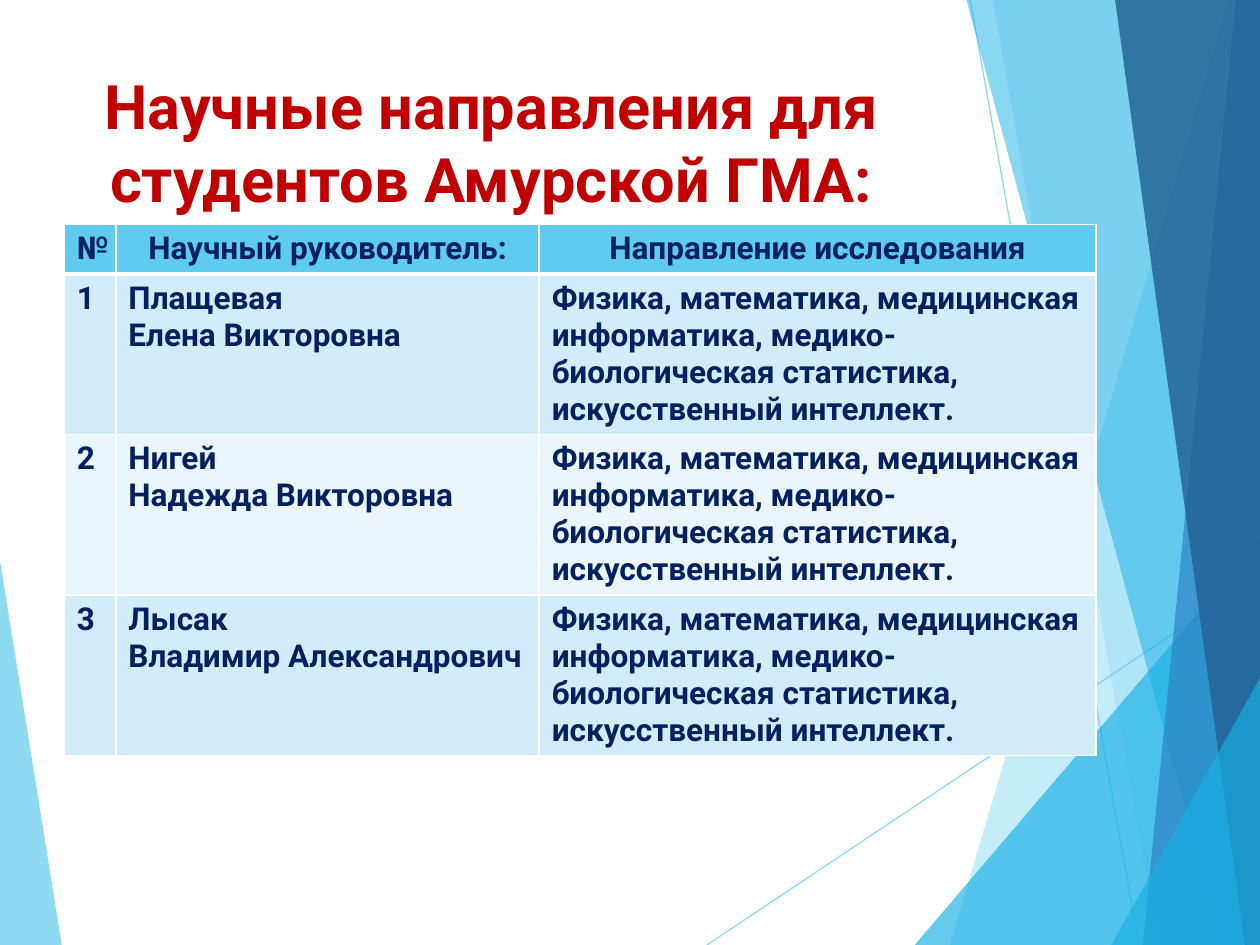
"""Build a slide listing research directions and their supervisors."""
from lxml import etree
from pptx import Presentation
from pptx.dml.color import RGBColor
from pptx.enum.shapes import MSO_CONNECTOR
from pptx.enum.text import MSO_ANCHOR, MSO_AUTO_SIZE, PP_ALIGN
from pptx.oxml import parse_xml
from pptx.oxml.ns import nsdecls, qn
from pptx.util import Inches, Pt

STRAIGHT = MSO_CONNECTOR.STRAIGHT
TOP = MSO_ANCHOR.TOP
NO_AUTOFIT = MSO_AUTO_SIZE.NONE
CENTER, LEFT = PP_ALIGN.CENTER, PP_ALIGN.LEFT

SKY, AZURE, WHITE = "5FCBEF", "17B0E4", "FFFFFF"
BAND_FILLS = ("D2ECF9", "EAF6FC")
TITLE_FORMAT = {"name": "Roboto", "size": Pt(35), "bold": True, "color": "C00000"}
TABLE_FORMAT = {"name": "Roboto", "size": Pt(18), "bold": True, "color": "002060"}

LEFT_FACET = ([(0, 4.45), (0.49, 7.5), (0, 7.5)], SKY, 70)
RAYS = [((5.61, 7.5), (10, 4.57)), ((7.7, 0), (9.04, 7.5))]
RIGHT_FACETS = [
    ([(9.75, 0), (7.54, 7.5), (10, 7.5), (10, 0)], SKY, 36),
    ([(7.88, 0), (9.19, 7.5), (10, 7.5), (10, 0)], SKY, 20),
    ([(7.26, 7.5), (10, 4.29), (10, 7.5)], AZURE, 66),
    ([(7.67, 0), (9.7, 7.5), (10, 7.5), (10, 0)], AZURE, 50),
    ([(9.81, 0), (9.07, 7.5), (10, 7.5), (10, 0)], "2E83C3", 70),
    ([(8.85, 0), (9.88, 7.5), (10, 7.5), (10, 0)], "226292", 82),
    ([(8.82, 7.5), (10, 5.38), (10, 7.5)], AZURE, 66),
]

TITLE = "Научные направления для студентов Амурской ГМА:"
HEADINGS = ("№", "Научный руководитель:", "Направление исследования")
SUPERVISORS = (
    "Плащевая\nЕлена Викторовна",
    "Нигей\nНадежда Викторовна",
    "Лысак\nВладимир Александрович",
)
DIRECTION = (
    "Физика, математика, медицинская информатика, "
    "медико-биологическая статистика, искусственный интеллект."
)
COLUMN_WIDTHS = (0.41, 3.36, 4.42)
ROW_HEIGHTS = (0.39, 1.27, 1.27, 1.27)


def rgb(value):
    """Return the colour for a hex string."""
    return RGBColor.from_string(value)


def set_alpha(fill_parent, percent):
    """Set the opacity of the first solid colour under an element."""
    color = next(fill_parent.iter(qn("a:srgbClr")))
    etree.SubElement(color, qn("a:alpha")).set("val", str(percent * 1000))


def format_paragraph(paragraph, values, alignment):
    """Apply font values and alignment to a paragraph's runs."""
    paragraph.alignment = alignment
    for run in paragraph.runs:
        for name, value in values.items():
            if name == "color":
                run.font.color.rgb = rgb(value)
            else:
                setattr(run.font, name, value)


def add_facet(slide, points, color, opacity):
    """Draw a translucent polygon."""
    vertices = [(Inches(x), Inches(y)) for x, y in points]
    builder = slide.shapes.build_freeform(*vertices[0])
    builder.add_line_segments(vertices[1:], close=True)
    shape = builder.convert_to_shape()
    shape.shadow.inherit = False
    shape.fill.solid()
    shape.fill.fore_color.rgb = rgb(color)
    shape.line.fill.background()
    set_alpha(shape.element.spPr, opacity)


def add_ray(slide, start, end):
    """Draw a thin translucent line."""
    ends = [Inches(value) for value in (*start, *end)]
    connector = slide.shapes.add_connector(STRAIGHT, *ends)
    connector.line.color.rgb = rgb(SKY)
    connector.line.width = Pt(0.75)
    properties = connector.element.spPr
    set_alpha(properties, 70)
    etree.SubElement(properties, qn("a:effectLst"))


def add_title(slide):
    """Fill and place the title in front of the facets."""
    title = slide.shapes.title
    title.element.getparent().append(title.element)
    title.left, title.top = Inches(0.43), Inches(0.44)
    title.width, title.height = Inches(6.94), Inches(1.44)
    frame = title.text_frame
    frame.text = TITLE
    frame.word_wrap = True
    frame.auto_size = NO_AUTOFIT
    frame.vertical_anchor = TOP
    frame.margin_top = Inches(0.1)
    format_paragraph(frame.paragraphs[0], TITLE_FORMAT, CENTER)


def add_borders(cell, top, bottom):
    """Give a cell white borders with the stated top and bottom widths."""
    properties = cell._tc.get_or_add_tcPr()
    for side, width in {"L": 1, "R": 1, "T": top, "B": bottom}.items():
        properties.append(parse_xml(
            f'<a:ln{side} {nsdecls("a")} w="{Pt(width)}"><a:solidFill>'
            f'<a:srgbClr val="{WHITE}"/></a:solidFill></a:ln{side}>'
        ))


def format_cell(cell, text, row):
    """Write and style one table cell."""
    cell.text = text
    add_borders(cell, 3 if row == 1 else 1, 3 if row == 0 else 1)
    cell.fill.solid()
    cell.fill.fore_color.rgb = rgb(BAND_FILLS[(row - 1) % 2] if row else SKY)
    for paragraph in cell.text_frame.paragraphs:
        format_paragraph(paragraph, TABLE_FORMAT, LEFT if row else CENTER)


def add_directions_table(slide):
    """Add the table of supervisors and directions."""
    rows = [HEADINGS]
    for number, supervisor in enumerate(SUPERVISORS, 1):
        rows.append((str(number), supervisor, DIRECTION))
    table = slide.shapes.add_table(
        len(rows), len(HEADINGS), Inches(0.51), Inches(1.78),
        Inches(sum(COLUMN_WIDTHS)), Inches(sum(ROW_HEIGHTS)),
    ).table
    for column, width in zip(table.columns, COLUMN_WIDTHS):
        column.width = Inches(width)
    for index, (texts, height) in enumerate(zip(rows, ROW_HEIGHTS)):
        table.rows[index].height = Inches(height)
        for cell, text in zip(table.rows[index].cells, texts):
            format_cell(cell, text, index)


def main():
    """Build and save the presentation."""
    presentation = Presentation()
    presentation.slide_width, presentation.slide_height = Inches(10), Inches(7.5)
    slide = presentation.slides.add_slide(presentation.slide_layouts[5])
    add_facet(slide, *LEFT_FACET)
    for start, end in RAYS:
        add_ray(slide, start, end)
    for facet in RIGHT_FACETS:
        add_facet(slide, *facet)
    add_title(slide)
    add_directions_table(slide)
    presentation.save("out.pptx")


if __name__ == "__main__":
    main()
